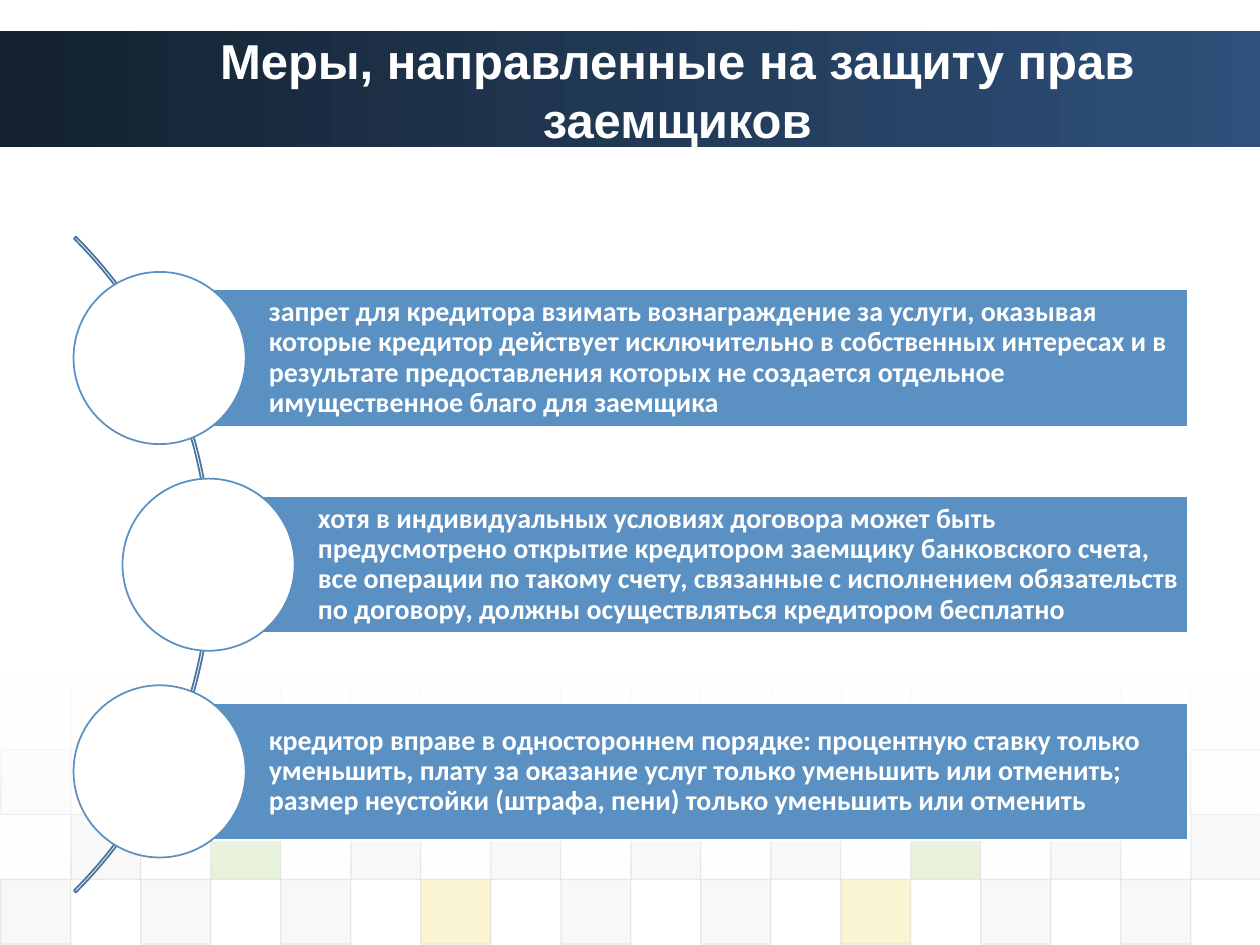
"""Build the slide on measures that protect borrowers' rights."""
from lxml import etree
from pptx import Presentation
from pptx.dml.color import RGBColor
from pptx.enum.shapes import MSO_SHAPE
from pptx.enum.text import MSO_ANCHOR, MSO_AUTO_SIZE, PP_ALIGN
from pptx.oxml.ns import qn
from pptx.util import Pt

RECTANGLE = MSO_SHAPE.RECTANGLE
OVAL = MSO_SHAPE.OVAL
BLOCK_ARC = MSO_SHAPE.BLOCK_ARC
MIDDLE = MSO_ANCHOR.MIDDLE
LEFT = PP_ALIGN.LEFT
CENTER = PP_ALIGN.CENTER
NO_AUTOFIT = MSO_AUTO_SIZE.NONE

WHITE = "FFFFFF"
BLUE = "5A90C2"
ARC_BLUE = "48739B"
GREY = "DDDDDD"
TILE_COLOURS = {"d": GREY, "e": "EAEAEA", "g": "8AC246", "y": "EFC821"}

TILE_WIDTH, TILE_HEIGHT = 40, 37
TILE_LEFT, TILE_TOP = 0.5, 391.5
TILE_ROWS = [
    (" y e e y d y e g e", 5),
    ("d d             y ", 10),
    (" d g d d d d g d d", 20),
    ("d d d y d d y d d ", 20),
]

MEASURES = [
    (42, "запрет для кредитора взимать вознаграждение за услуги, оказывая которые кредитор "
         "действует исключительно в собственных интересах и в результате предоставления "
         "которых не создается отдельное имущественное благо для заемщика"),
    (70, "хотя в индивидуальных условиях договора может быть предусмотрено открытие "
         "кредитором заемщику банковского счета, все операции по такому счету, связанные "
         "с исполнением обязательств по договору, должны осуществляться кредитором бесплатно"),
    (42, "кредитор вправе в одностороннем порядке: процентную ставку только уменьшить, "
         "плату за оказание услуг только уменьшить или отменить;\tразмер неустойки "
         "(штрафа, пени) только уменьшить или отменить"),
]
CIRCLE_SIZE = 98.4
CIRCLE_TOP = 155.4
MEASURE_PITCH = 118.1
BAR_HEIGHT = 78.4
BAR_RIGHT = 679


def colour(value):
    return RGBColor.from_string(value)


class SlideBuilder:
    def __init__(self, slide):
        self.slide = slide
        self.title_font = "Arial"
        self.body_font = "Calibri"

    def set_alpha(self, shape, percents):
        for element, percent in zip(shape._element.spPr.iter(qn("a:srgbClr")), percents):
            etree.SubElement(element, qn("a:alpha")).set("val", str(percent * 1000))

    def shape(self, kind, left, top, width, height, fill=None, line=None, weight=1):
        shape = self.slide.shapes.add_shape(kind, Pt(left), Pt(top), Pt(width), Pt(height))
        shape.shadow.inherit = False
        if fill:
            shape.fill.solid()
            shape.fill.fore_color.rgb = colour(fill)
        else:
            shape.fill.background()
        if line:
            shape.line.color.rgb = colour(line)
            shape.line.width = Pt(weight)
        else:
            shape.line.fill.background()
        return shape

    def gradient(self, left, top, width, height, colours, angle, alphas=()):
        shape = self.shape(RECTANGLE, left, top, width, height)
        shape.fill.gradient()
        shape.fill.gradient_angle = angle
        for stop, value in zip(shape.fill.gradient_stops, colours):
            stop.color.rgb = colour(value)
        self.set_alpha(shape, alphas)

    def tile(self, column, row, fill, alpha):
        shape = self.shape(RECTANGLE, TILE_LEFT + column * TILE_WIDTH, TILE_TOP + row * TILE_HEIGHT,
                           TILE_WIDTH, TILE_HEIGHT, fill, GREY, 0.75)
        self.set_alpha(shape, (alpha, 60))

    def add_text(self, shape, text, font_name, size, alignment):
        frame = shape.text_frame
        frame.word_wrap = True
        frame.auto_size = NO_AUTOFIT
        frame.vertical_anchor = MIDDLE
        paragraph = frame.paragraphs[0]
        paragraph.alignment = alignment
        run = paragraph.add_run()
        run.text = text
        run.font.name = font_name
        run.font.size = Pt(size)
        run.font.bold = True
        run.font.color.rgb = colour(WHITE)
        return frame

    def title(self, text, left, top, width, height):
        title = self.slide.shapes.title
        self.slide.shapes._spTree.append(title._element)
        title.left, title.top, title.width, title.height = map(Pt, (left, top, width, height))
        self.add_text(title, text, self.title_font, 28, CENTER)

    def arc(self, left, top, size):
        arc = self.shape(BLOCK_ARC, left, top, size, size, line=ARC_BLUE)
        for index, value in enumerate((189, 27, 0.003)):
            arc.adjustments[index] = value

    def measure(self, left, top, text):
        bar_left = left + CIRCLE_SIZE / 2
        bar_top = top + (CIRCLE_SIZE - BAR_HEIGHT) / 2
        bar = self.shape(RECTANGLE, bar_left, bar_top, BAR_RIGHT - bar_left, BAR_HEIGHT, BLUE, WHITE)
        frame = self.add_text(bar, text, self.body_font, 16, LEFT)
        frame.margin_left = Pt(62.5)
        frame.margin_top = frame.margin_right = frame.margin_bottom = Pt(3)
        frame.paragraphs[0].line_spacing = 0.9
        self.shape(OVAL, left, top, CIRCLE_SIZE, CIRCLE_SIZE, WHITE, BLUE)


def main():
    presentation = Presentation()
    presentation.slide_width = Pt(720)
    presentation.slide_height = Pt(540)
    builder = SlideBuilder(presentation.slides.add_slide(presentation.slide_layouts[5]))

    builder.gradient(0, 18, 720, 66, ("14212F", "2E507A"), 0)
    for row, (pattern, alpha) in enumerate(TILE_ROWS):
        for column, key in enumerate(pattern):
            if key in TILE_COLOURS:
                builder.tile(column, row, TILE_COLOURS[key], alpha)
    builder.gradient(0, 386.5, 720, 116.5, (WHITE, WHITE), 270, (90, 0))

    builder.title("Меры, направленные на защиту прав заемщиков", 96, 18, 582, 66)
    builder.arc(-409, 57.6, 530)
    for index, (left, text) in enumerate(MEASURES):
        builder.measure(left, CIRCLE_TOP + index * MEASURE_PITCH, text)

    presentation.save("out.pptx")


if __name__ == "__main__":
    main()
